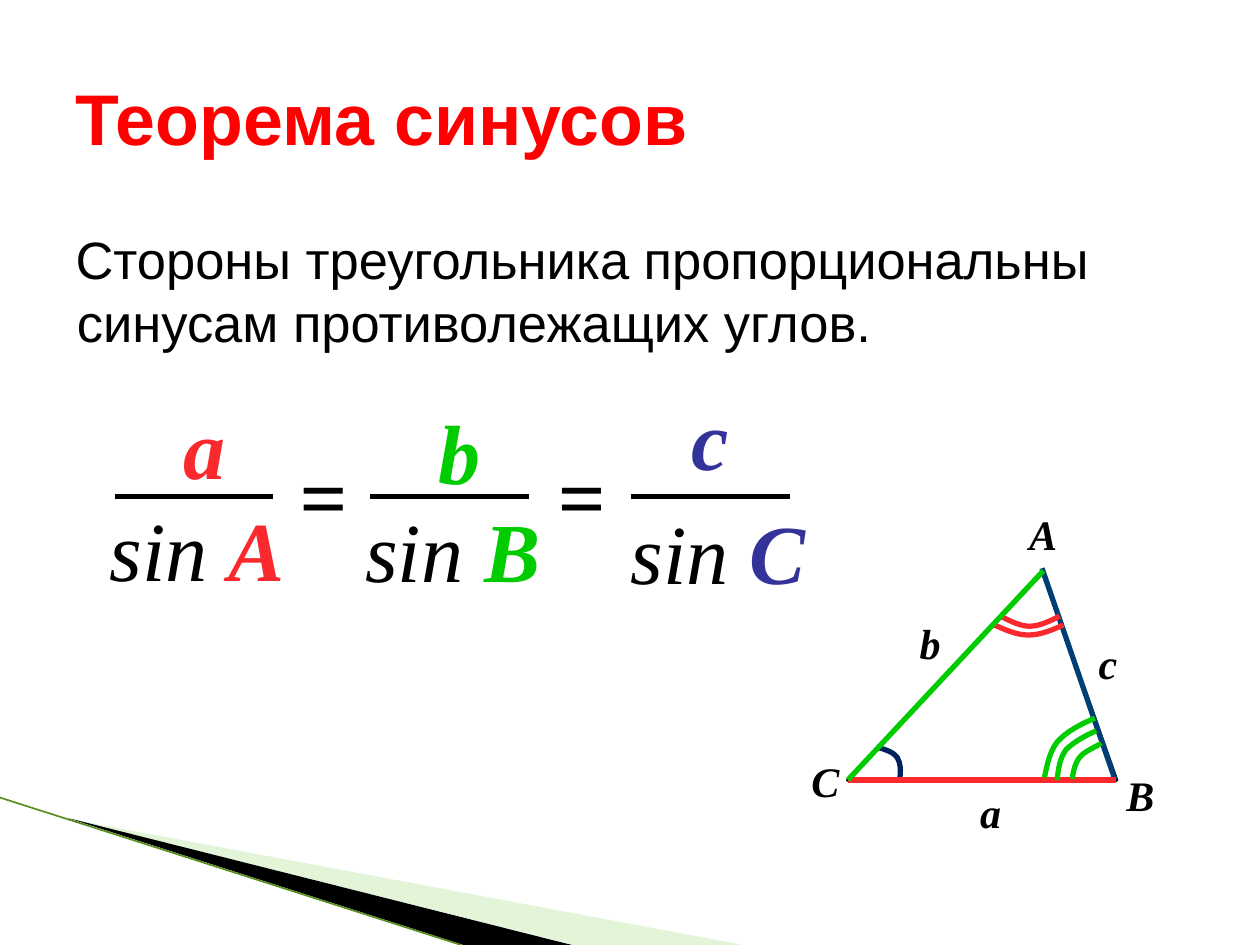
from lxml import etree
from pptx import Presentation
from pptx import util as u
from pptx.dml.color import RGBColor
from pptx.enum import shapes, text
from pptx.oxml import ns

BLACK, RED, GREEN, INDIGO = "000000", "F9292E", "00CC00", "333399"


def rgb(value):
    return RGBColor.from_string(value)


def add_run(p, content, size=24, font="Times New Roman", color=BLACK, bold=False, italic=False):
    r = p.add_run()
    r.text = content
    r.font.size = u.Pt(size)
    r.font.name = font
    r.font.color.rgb = rgb(color)
    r.font.bold = bold
    r.font.italic = italic


class Deck:
    def __init__(self, prs):
        self.s = prs.slides.add_slide(prs.slide_layouts[1])

    def placeholder(self, idx, box, content, **fmt):
        sp = self.s.placeholders[idx]
        sp.left, sp.top, sp.width, sp.height = map(u.Inches, box)
        tf = sp.text_frame
        tf.word_wrap = True
        tf.auto_size = text.MSO_AUTO_SIZE.NONE
        p = tf.paragraphs[0]
        p.alignment = text.PP_ALIGN.LEFT
        p.space_before = u.Pt(0)
        add_run(p, content, font="Arial", **fmt)
        return p

    def label(self, x, y, w, h, *runs):
        sp = self.s.shapes.add_textbox(*map(u.Inches, (x, y, w, h)))
        tf = sp.text_frame
        tf.word_wrap = False
        tf.auto_size = text.MSO_AUTO_SIZE.SHAPE_TO_FIT_TEXT
        for content, fmt in runs:
            add_run(tf.paragraphs[0], content, **fmt)

    def line(self, start, end, color=BLACK, width=3):
        sp = self.s.shapes.add_connector(shapes.MSO_CONNECTOR.STRAIGHT,
                                         *map(u.Inches, (*start, *end)))
        sp.line.color.rgb = rgb(color)
        sp.line.width = u.Pt(width)
        etree.SubElement(sp._element.spPr, ns.qn("a:effectLst"))

    def outline(self, points, closed):
        pts = [tuple(map(u.Inches, pt)) for pt in points]
        fb = self.s.shapes.build_freeform(*pts[0], scale=1.0)
        fb.add_line_segments(pts[1:], close=closed)
        sp = fb.convert_to_shape()
        sp.shadow.inherit = False
        return sp

    def polygon(self, points, color, alpha=100):
        sp = self.outline(points, True)
        sp.line.fill.background()
        sp.fill.solid()
        sp.fill.fore_color.rgb = rgb(color)
        if alpha < 100:
            clr = sp._element.spPr.find(ns.qn("a:solidFill"))[0]
            etree.SubElement(clr, ns.qn("a:alpha"), val=str(alpha * 1000))

    def arc(self, color, *points):
        sp = self.outline(points, False)
        segments = list(sp._element.iter(ns.qn("a:lnTo")))
        for i in range(0, len(segments), 3):
            curve = etree.Element(ns.qn("a:cubicBezTo"))
            segments[i].addprevious(curve)
            for segment in segments[i:i + 3]:
                curve.append(segment[0])
                segment.getparent().remove(segment)
        sp.fill.background()
        sp.line.color.rgb = rgb(color)
        sp.line.width = u.Pt(3)

    def triangle(self, x, y, w, h, apex):
        sp = self.s.shapes.add_shape(shapes.MSO_SHAPE.ISOSCELES_TRIANGLE,
                                     *map(u.Inches, (x, y, w, h)))
        sp.adjustments[0] = apex
        sp.shadow.inherit = False
        sp.fill.solid()
        sp.fill.fore_color.rgb = rgb("FFFFFF")
        sp.line.color.rgb = rgb(BLACK)
        sp.line.width = u.Pt(2.25)


def draw_backdrop(deck):
    deck.polygon([(0.55, 6.5), (5.9, 7.5), (4.56, 7.5)], "B8E7A1", alpha=40)
    deck.polygon([(0.53, 6.49), (4.54, 7.5), (3.68, 7.5)], BLACK)
    deck.line((0, 6.33), (3.66, 7.5), "559020", 0.95)


def draw_texts(deck):
    deck.placeholder(0, (0.5, 0.3, 9, 1.25), "Теорема синусов",
                     size=41, color="FF0000", bold=True)
    deck.s.shapes.title.text_frame.vertical_anchor = text.MSO_ANCHOR.MIDDLE
    p = deck.placeholder(
        1, (0.5, 1.75, 9, 2),
        "Стороны треугольника пропорциональны синусам противолежащих углов.", size=30)
    p.line_spacing = u.Pt(36)
    pPr = p._p.get_or_add_pPr()
    pPr.set("marL", str(u.Inches(0.01)))
    pPr.set("indent", str(-u.Inches(0.01)))
    etree.SubElement(pPr, ns.qn("a:buNone"))


def draw_triangle(deck):
    b, c = (8.85, 6.19), (6.73, 6.19)
    deck.triangle(6.73, 4.54, 2.13, 1.65, 0.726)
    for name, x, y, w in [("С", 6.34, 5.95, 0.42), ("b", 7.2, 4.85, 0.37),
                          ("a", 7.68, 6.19, 0.37), ("c", 8.62, 5.01, 0.35),
                          ("A", 8.07, 3.99, 0.42), ("B", 8.84, 6.06, 0.42)]:
        deck.label(x, y, w, 0.5, (name, dict(bold=True, italic=True)))
    deck.line((8.27, 4.51), b, "003F75")
    deck.arc("002060", (6.96, 5.93), (7.03, 5.95), (7.09, 5.97), (7.12, 6.01),
             (7.15, 6.06), (7.15, 6.12), (7.14, 6.19))
    deck.line(c, (8.86, 6.19), RED)
    deck.arc(RED, (7.94, 4.89), (8.02, 4.93), (8.1, 4.97), (8.17, 4.97),
             (8.25, 4.97), (8.33, 4.93), (8.41, 4.89))
    deck.arc(RED, (7.89, 4.96), (7.98, 5), (8.07, 5.04), (8.16, 5.04),
             (8.26, 5.04), (8.35, 5), (8.44, 4.96))
    deck.line(c, (8.28, 4.53), GREEN)
    deck.arc(GREEN, (8.39, 6.19), (8.4, 6.1), (8.41, 6.02), (8.46, 5.95),
             (8.52, 5.89), (8.61, 5.84), (8.7, 5.8))
    deck.arc(GREEN, (8.51, 6.18), (8.52, 6.12), (8.53, 6.06), (8.57, 6.01),
             (8.6, 5.97), (8.67, 5.94), (8.74, 5.9))
    deck.arc(GREEN, (8.29, 6.17), (8.31, 6.07), (8.33, 5.97), (8.39, 5.89),
             (8.46, 5.81), (8.57, 5.75), (8.69, 5.7))


def draw_formula(deck):
    fractions = [("a", "A", RED, (1.36, 3.09, 0.81), (0.77, 3.9), 0.91),
                 ("b", "B", GREEN, (3.38, 3.13, 0.54), (2.8, 3.91), 2.94),
                 ("c", "C", INDIGO, (5.39, 3.02, 0.5), (4.91, 3.92), 5.01)]
    for side, angle, color, top, bottom, bar in fractions:
        accent = dict(size=48, color=color, bold=True, italic=True)
        deck.label(*top, 0.91, (side, accent))
        deck.label(*bottom, 1.6, 0.91, ("sin ", dict(size=48, italic=True)), (angle, accent))
        deck.line((bar, 3.94), (bar + 1.26, 3.94))
    for x in (2.28, 4.33):
        deck.label(x, 3.47, 0.59, 0.91, ("=", dict(size=48, bold=True)))


def main():
    prs = Presentation()
    prs.slide_width, prs.slide_height = u.Inches(10), u.Inches(7.5)
    deck = Deck(prs)
    draw_backdrop(deck)
    draw_texts(deck)
    draw_triangle(deck)
    draw_formula(deck)
    prs.save("out.pptx")


if __name__ == "__main__":
    main()
